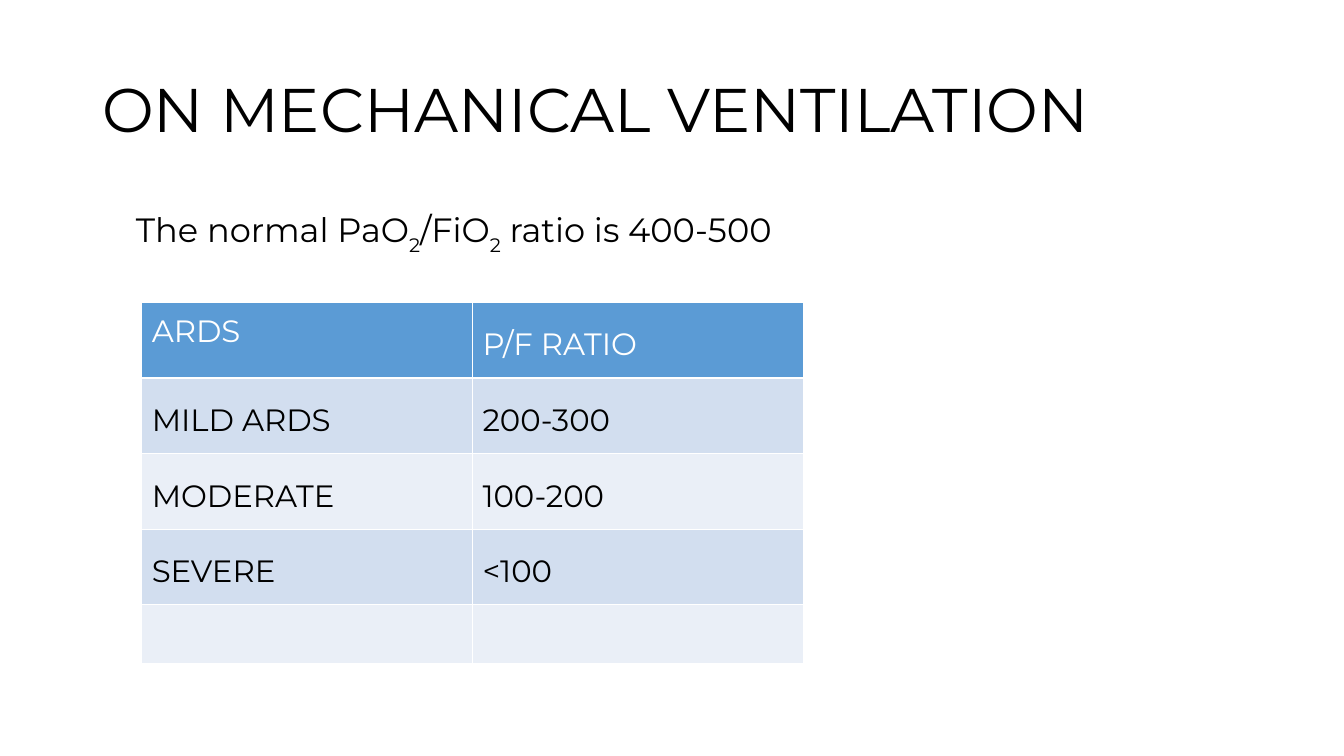
from lxml.etree import SubElement
from pptx import Presentation
from pptx.dml.color import RGBColor
from pptx.enum.text import MSO_ANCHOR
from pptx.oxml.ns import qn
from pptx.util import Pt

PX = 9525


def px(length):
    return length * PX


def color(value):
    return RGBColor.from_string(value)


class SlideBuilder:
    """Holds the text style and the current slide, and adds its elements."""

    face = "Montserrat"
    ink = "000000"
    rule = "FFFFFF"

    def __init__(self, deck):
        self.slide = deck.slides.add_slide(deck.slide_layouts[6])

    def style(self, paragraph, size, ink, spacing):
        paragraph.font.name = self.face
        paragraph.font.size = Pt(size)
        paragraph.font.color.rgb = color(ink)
        paragraph.line_spacing = spacing

    def text(self, box, parts, size, spacing=1.0, anchor=MSO_ANCHOR.TOP):
        frame = self.slide.shapes.add_textbox(*map(px, box)).text_frame
        frame.word_wrap = True
        frame.vertical_anchor = anchor
        paragraph = frame.paragraphs[0]
        self.style(paragraph, size, self.ink, spacing)
        for words, subscript in parts:
            run = paragraph.add_run()
            run.text = words
            if subscript:
                run._r.get_or_add_rPr().set("baseline", "-30000")

    def border(self, cell):
        properties = cell._tc.get_or_add_tcPr()
        for side in ("a:lnL", "a:lnR", "a:lnT", "a:lnB"):
            line = SubElement(properties, qn(side), w=str(Pt(1)))
            fill = SubElement(line, qn("a:solidFill"))
            SubElement(fill, qn("a:srgbClr"), val=self.rule)

    def cell(self, cell, words, fill, ink, spacing):
        self.border(cell)
        cell.fill.solid()
        cell.fill.fore_color.rgb = color(fill)
        cell.text = words
        self.style(cell.text_frame.paragraphs[0], 22, ink, spacing)

    def table(self, left, top, column_width, heights, rows):
        columns = len(rows[0])
        table = self.slide.shapes.add_table(
            len(rows), columns, px(left), px(top),
            px(column_width * columns), px(sum(heights))).table
        table.first_row = table.horz_banding = False
        for column in table.columns:
            column.width = px(column_width)
        for r, (height, row) in enumerate(zip(heights, rows)):
            table.rows[r].height = px(height)
            band = "D2DEEF" if r % 2 else "EAEFF7"
            fill, ink = (band, self.ink) if r else ("5B9BD5", "FFFFFF")
            for c, words in enumerate(row):
                spacing = 1.15 if r == c == 0 else 1.5 if words else 1.0
                self.cell(table.cell(r, c), words, fill, ink, spacing)


def main():
    deck = Presentation()
    deck.slide_width, deck.slide_height = px(1280), px(720)
    builder = SlideBuilder(deck)
    builder.text((88, 38, 1104, 139), [("ON MECHANICAL VENTILATION", False)],
                 44, 0.9, MSO_ANCHOR.MIDDLE)
    builder.table(135, 288, 315, [72, 72, 72, 72, 56], [
        ("ARDS", "P/F RATIO"),
        ("MILD ARDS", "200-300"),
        ("MODERATE", "100-200"),
        ("SEVERE", "<100"),
        ("", ""),
    ])
    builder.text((120, 194, 840, 48), [
        ("The normal PaO", False), ("2", True), ("/FiO", False),
        ("2", True), (" ratio is 400-500", False),
    ], 24)
    deck.save("out.pptx")


if __name__ == "__main__":
    main()
